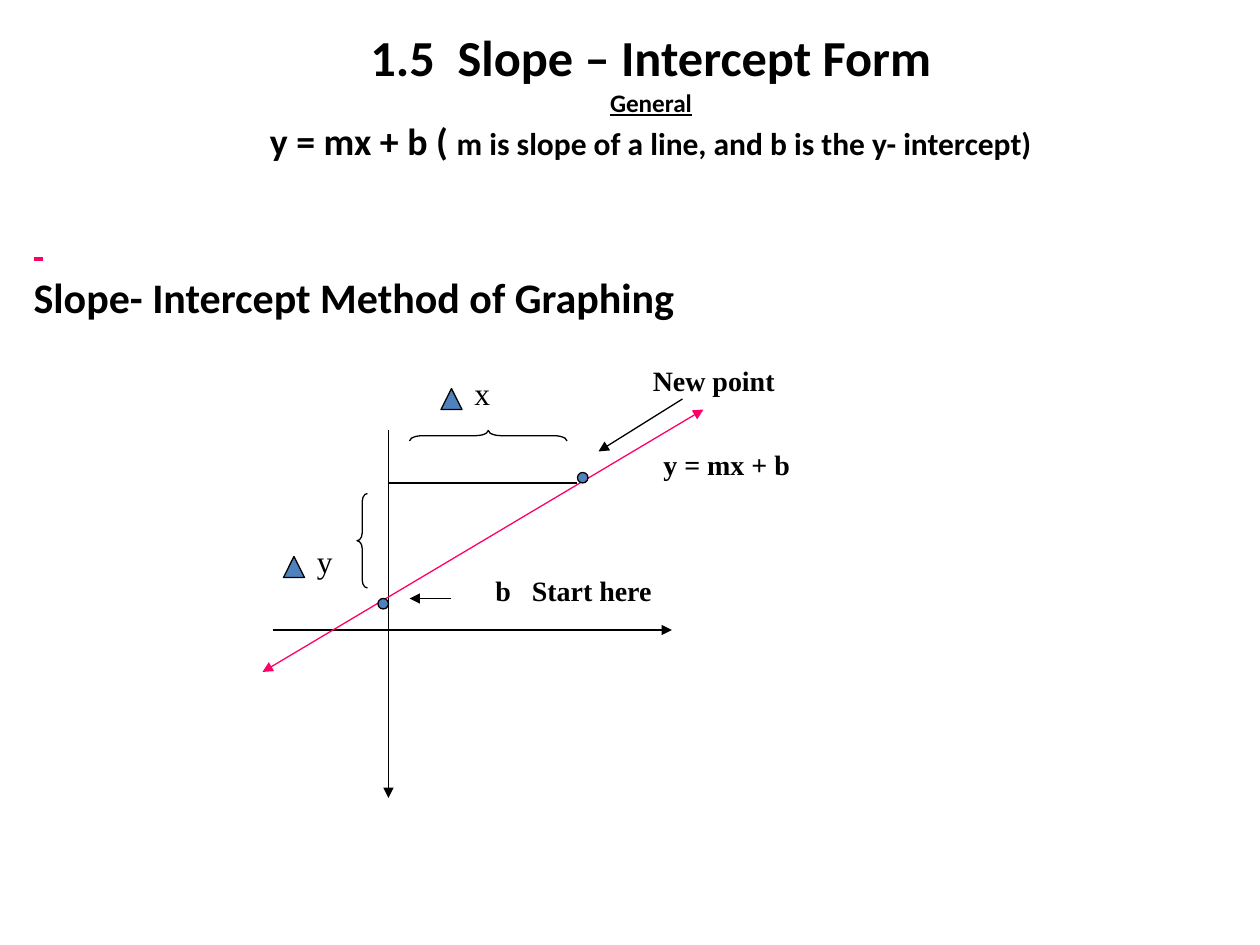
"""Build the slope-intercept form slide with its labelled graph."""
from copy import deepcopy

from lxml import etree
from pptx import Presentation
from pptx.dml.color import RGBColor
from pptx.enum import shapes, text
from pptx.oxml.ns import qn
from pptx.util import Pt

BLACK = RGBColor(0x00, 0x00, 0x00)
PINK = RGBColor(0xFF, 0x00, 0x66)
BLUE = RGBColor(0x4F, 0x81, 0xBD)
SHAPE = shapes.MSO_SHAPE


def add_run(p, words, **fmt):
    r = p.add_run()
    r.text = words
    r.font.color.rgb = fmt.pop("color", BLACK)
    for name, value in fmt.items():
        setattr(r.font, name, value)
    return r


def place(sp, left, top, width, height):
    sp.left, sp.top, sp.width, sp.height = Pt(left), Pt(top), Pt(width), Pt(height)


prs = Presentation()
prs.slide_width, prs.slide_height = Pt(720), Pt(540)
s = prs.slides.add_slide(prs.slide_layouts[1])
title, body = s.placeholders

place(title, 24, 24, 696, 60)
tf = title.text_frame
tf.auto_size = text.MSO_AUTO_SIZE.NONE
tf.vertical_anchor = text.MSO_ANCHOR.MIDDLE
p = tf.paragraphs[0]
p.alignment = text.PP_ALIGN.CENTER
for words, size, underline, ends_line in [
    ("1.5  Slope – Intercept Form", 28.8, False, True),
    ("General", 14.4, True, True),
    ("y = mx + b ( ", 21.6, False, False),
    ("m is slope of a line, and b is the y- intercept)", 18, False, False),
]:
    r = add_run(p, words, name="Calibri", size=Pt(size), bold=True, underline=underline)
    if ends_line:
        p.add_line_break()
        p._p[-1].append(deepcopy(r._r.rPr))

place(body, 12, 84, 654, 396)
tf = body.text_frame
tf.auto_size = text.MSO_AUTO_SIZE.NONE
tf.margin_top = Pt(37.5)
for i, (words, color, underline) in enumerate([
    (" ", PINK, True),
    ("Slope- Intercept Method of Graphing", BLACK, False),
]):
    p = tf.add_paragraph() if i else tf.paragraphs[0]
    p.space_before = Pt(4.8 * i)
    pPr = p._p.get_or_add_pPr()
    pPr.set("marL", str(Pt(27)))
    pPr.set("indent", str(-Pt(27)))
    etree.SubElement(pPr, qn("a:buNone"))
    add_run(p, words, name="Calibri", size=Pt(24), bold=True, color=color, underline=underline)

for x1, y1, x2, y2, color, arrows in [
    (156, 360, 384, 360, BLACK, ["tailEnd"]),
    (222, 246, 222, 456, BLACK, ["tailEnd"]),
    (150, 384, 402, 234, PINK, ["headEnd", "tailEnd"]),
    (222, 276, 330, 276, BLACK, []),
    (258, 342, 234, 342, BLACK, ["tailEnd"]),
    (390, 228, 342, 258, BLACK, ["tailEnd"]),
]:
    sp = s.shapes.add_connector(shapes.MSO_CONNECTOR.STRAIGHT, Pt(x1), Pt(y1), Pt(x2), Pt(y2))
    sp.line.color.rgb = color
    sp.line.width = Pt(0.75)
    for end in arrows:
        etree.SubElement(sp.line._get_or_add_ln(), qn(f"a:{end}"), type="triangle")
    etree.SubElement(sp._element.spPr, qn("a:effectLst"))

for kind, left, top, width, height, rotation, curve in [
    (SHAPE.LEFT_BRACE, 204, 282, 6, 54, 0, 0.75),
    (SHAPE.LEFT_BRACE, 276, 204, 6, 90, 90, 1.25),
    (SHAPE.ISOSCELES_TRIANGLE, 252, 222, 12, 12, 0, None),
    (SHAPE.ISOSCELES_TRIANGLE, 162, 318, 12, 12, 0, None),
    (SHAPE.OVAL, 216, 342, 6, 6, 0, None),
    (SHAPE.OVAL, 330, 270, 6, 6, 0, None),
]:
    sp = s.shapes.add_shape(kind, Pt(left), Pt(top), Pt(width), Pt(height))
    sp.shadow.inherit = False
    sp.rotation = rotation
    sp.line.color.rgb = BLACK
    sp.line.width = Pt(0.75)
    if curve:
        sp.adjustments[0] = curve
        sp.fill.background()
    else:
        sp.fill.solid()
        sp.fill.fore_color.rgb = BLUE

for words, left, top, width, height, size, bold in [
    ("b   Start here", 276, 324, 108.7, 26.6, 16, True),
    ("New point", 366, 204, 88.6, 26.6, 16, True),
    ("y = mx + b", 372, 252, 87.1, 26.6, 16, True),
    ("x", 264, 210, 23.8, 28.8, 18, False),
    ("y", 174, 306, 23.8, 28.8, 18, False),
]:
    sp = s.shapes.add_textbox(Pt(left), Pt(top), Pt(width), Pt(height))
    tf = sp.text_frame
    tf.word_wrap = False
    tf.auto_size = text.MSO_AUTO_SIZE.SHAPE_TO_FIT_TEXT
    add_run(tf.paragraphs[0], words, name="Times New Roman", size=Pt(size), bold=bold)

prs.save("out.pptx")
